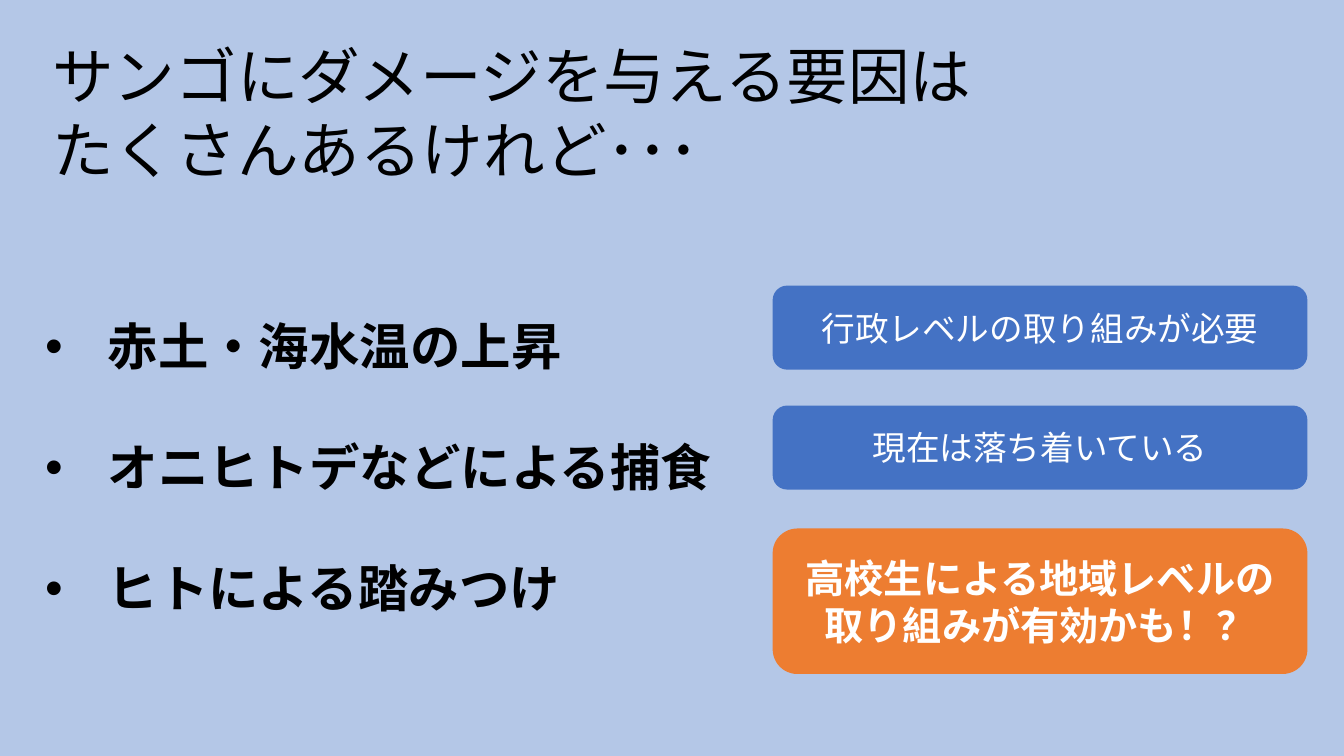
from lxml import etree
from pptx import Presentation
from pptx.dml.color import RGBColor
from pptx.enum.shapes import MSO_SHAPE
from pptx.enum.text import MSO_ANCHOR, PP_ALIGN
from pptx.oxml.ns import qn
from pptx.util import Inches, Pt

ROUNDED = MSO_SHAPE.ROUNDED_RECTANGLE
TOP, MIDDLE = MSO_ANCHOR.TOP, MSO_ANCHOR.MIDDLE
LEFT, CENTER = PP_ALIGN.LEFT, PP_ALIGN.CENTER
FONT = "Noto Sans CJK JP"
COLORS = {
    "background": "B4C7E7",
    "text": "000000",
    "calm": "4472C4",
    "accent": "ED7D31",
    "white": "FFFFFF",
}
BULLET_INDENT = 0.62
CALLOUT_LEFT, CALLOUT_WIDTH = 7.67, 5.29

TITLE = ["サンゴにダメージを与える要因は", "たくさんあるけれど･･･"]
FACTORS = ["赤土・海水温の上昇", "オニヒトデなどによる捕食", "ヒトによる踏みつけ"]
# text, top, height, fill, size, bold
CALLOUTS = [
    ("行政レベルの取り組みが必要", 2.84, 0.82, "calm", 24, False),
    ("現在は落ち着いている", 4.03, 0.82, "calm", 24, False),
    ("高校生による地域レベルの取り組みが有効かも！？", 5.25, 1.43, "accent", 28, True),
]


def color(name):
    return RGBColor.from_string(COLORS[name])


def add_bullet(paragraph):
    properties = paragraph._p.get_or_add_pPr()
    properties.set("marL", str(Inches(BULLET_INDENT)))
    properties.set("indent", str(-Inches(BULLET_INDENT)))
    font = etree.SubElement(properties, qn("a:buFont"))
    font.set("typeface", "Arial")
    etree.SubElement(properties, qn("a:buChar")).set("char", "•")


def write_text(shape, lines, size=24, bold=False, ink="text", align=LEFT,
               anchor=TOP, bullets=False, line_spacing=None):
    frame = shape.text_frame
    frame.word_wrap = True
    frame.vertical_anchor = anchor
    for index, line in enumerate(lines):
        paragraph = frame.add_paragraph() if index else frame.paragraphs[0]
        paragraph.alignment = align
        if line_spacing:
            paragraph.line_spacing = line_spacing
        if bullets:
            add_bullet(paragraph)
        run = paragraph.add_run()
        run.text = line
        run.font.size = Pt(size)
        run.font.bold = bold
        run.font.name = FONT
        run.font.color.rgb = color(ink)
        east_asian = etree.SubElement(run._r.get_or_add_rPr(), qn("a:ea"))
        east_asian.set("typeface", FONT)


def add_text_box(slide, left, top, width, height, lines, **text_format):
    box = slide.shapes.add_textbox(
        Inches(left), Inches(top), Inches(width), Inches(height))
    write_text(box, lines, **text_format)


def add_callout(slide, text, top, height, fill, size, bold):
    shape = slide.shapes.add_shape(
        ROUNDED, Inches(CALLOUT_LEFT), Inches(top),
        Inches(CALLOUT_WIDTH), Inches(height))
    shape.shadow.inherit = False
    shape.fill.solid()
    shape.fill.fore_color.rgb = color(fill)
    shape.line.color.rgb = color(fill)
    shape.line.width = Pt(1)
    write_text(shape, [text], size=size, bold=bold, ink="white",
               align=CENTER, anchor=MIDDLE)


def main():
    presentation = Presentation()
    presentation.slide_width = Inches(13.33)
    presentation.slide_height = Inches(7.5)
    slide = presentation.slides.add_slide(presentation.slide_layouts[6])
    slide.background.fill.solid()
    slide.background.fill.fore_color.rgb = color("background")

    add_text_box(slide, 0.42, 0.33, 11.24, 1.58, TITLE, size=44)
    add_text_box(slide, 0.35, 2.48, 7.88, 4.95, FACTORS, size=36, bold=True,
                 bullets=True, line_spacing=2.0)
    for callout in CALLOUTS:
        add_callout(slide, *callout)

    presentation.save("out.pptx")


if __name__ == "__main__":
    main()
